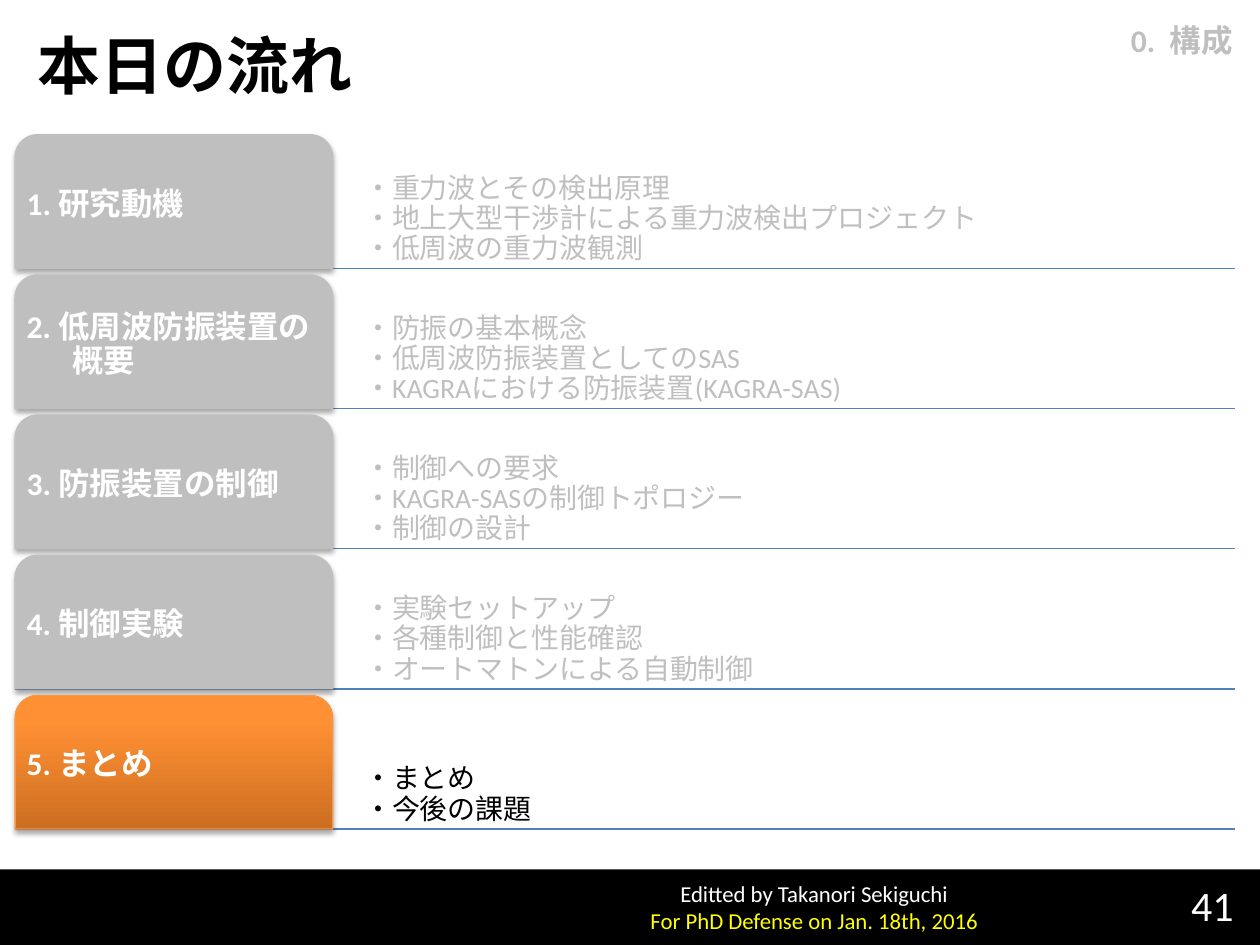
from lxml.etree import SubElement
from pptx import Presentation
from pptx.dml.color import RGBColor
from pptx.enum.shapes import MSO_CONNECTOR, MSO_SHAPE
from pptx.enum.text import MSO_ANCHOR, PP_ALIGN
from pptx.oxml import parse_xml
from pptx.oxml.ns import nsdecls, qn
from pptx.util import Inches, Pt

# Content
TITLE = "本日の流れ"
CORNER = "0.  構成"
PAGE_NUMBER = "41"
FOOTER = [("Editted by Takanori Sekiguchi", "white"),
          ("For PhD Defense on Jan. 18th, 2016", "yellow")]
SECTIONS = [
    (["1. 研究動機"],
     ["重力波とその検出原理", "地上大型干渉計による重力波検出プロジェクト", "低周波の重力波観測"]),
    (["2. 低周波防振装置の", "概要"],
     ["防振の基本概念", "低周波防振装置としてのSAS", "KAGRAにおける防振装置(KAGRA-SAS)"]),
    (["3. 防振装置の制御"],
     ["制御への要求", "KAGRA-SASの制御トポロジー", "制御の設計"]),
    (["4. 制御実験"],
     ["実験セットアップ", "各種制御と性能確認", "オートマトンによる自動制御"]),
    (["5. まとめ"],
     ["まとめ", "今後の課題"]),
]
CURRENT = 4

COLORS = {"black": "000000", "white": "FFFFFF", "yellow": "FFFF00",
          "gray": "BFBFBF", "blue": "4F81BD", "orange": "F79646"}
CURRENT_STOPS = [(0, "CC6E20"), (80, "FF9034"), (100, "FF9136")]
FONT = "Calibri"

# Layout in inches
LEFT, TOP, PITCH = 0.12, 1.07, 1.1125
TAB_WIDTH, ROW_HEIGHT, RIGHT = 2.52, 1.06, 9.8
TOPIC_INDENT, LABEL_INDENT = 0.22, 0.36


def color(name):
    return RGBColor.from_string(COLORS[name])


def set_frame(shape, anchor, inset=None, wrap=True):
    frame = shape.text_frame
    frame.word_wrap = wrap
    frame.vertical_anchor = anchor
    if inset is not None:
        frame.margin_left = frame.margin_right = Inches(inset)
        frame.margin_top = frame.margin_bottom = Inches(inset)
    return frame


def add_box(page, place, anchor=MSO_ANCHOR.TOP, inset=None, wrap=True):
    box = page.shapes.add_textbox(*map(Inches, place))
    return set_frame(box, anchor, inset, wrap)


def add_span(para, text, size, name, bold=False):
    span = para.add_run()
    span.text = text
    span.font.name = FONT
    span.font.size = Pt(size)
    span.font.bold = bold
    span.font.color.rgb = color(name)


def set_indent(para, left, first=0.0):
    properties = para._p.get_or_add_pPr()
    properties.set("marL", str(Inches(left)))
    properties.set("indent", str(Inches(first)))


def set_gradient(shape):
    stops = "".join(f'<a:gs pos="{pos * 1000}"><a:srgbClr val="{value}"/></a:gs>'
                    for pos, value in CURRENT_STOPS)
    gradient = parse_xml(f'<a:gradFill {nsdecls("a")} rotWithShape="1"><a:gsLst>{stops}'
                         '</a:gsLst><a:lin ang="16200000" scaled="0"/></a:gradFill>')
    solid = shape._element.spPr.find(qn("a:solidFill"))
    solid.getparent().replace(solid, gradient)


def set_shadow(shape):
    shape.shadow.inherit = False
    effects = shape._element.spPr.find(qn("a:effectLst"))
    effects.append(parse_xml(
        f'<a:outerShdw {nsdecls("a")} blurRad="{Pt(3.1)}" dist="{Pt(1.8)}" dir="5400000" '
        f'rotWithShape="0"><a:srgbClr val="{COLORS["black"]}"><a:alpha val="35000"/>'
        '</a:srgbClr></a:outerShdw>'))


def add_rule(page, y):
    rule = page.shapes.add_connector(MSO_CONNECTOR.STRAIGHT, Inches(LEFT), Inches(y),
                                     Inches(RIGHT), Inches(y))
    rule.line.color.rgb = color("blue")
    rule.line.width = Pt(0.75)
    SubElement(rule._element.spPr, qn("a:effectLst"))


def add_topics(page, top, topics, name):
    place = (LEFT + TAB_WIDTH, top, RIGHT - LEFT - TAB_WIDTH, ROW_HEIGHT)
    frame = add_box(page, place, MSO_ANCHOR.BOTTOM, 0.03)
    for index, topic in enumerate(topics):
        para = frame.add_paragraph() if index else frame.paragraphs[0]
        set_indent(para, TOPIC_INDENT)
        para.line_spacing = 0.9
        add_span(para, "・" + topic, 16, name)


def add_tab(page, top, label, active):
    tab = page.shapes.add_shape(MSO_SHAPE.ROUND_2_SAME_RECTANGLE, Inches(LEFT), Inches(top),
                                Inches(TAB_WIDTH), Inches(ROW_HEIGHT))
    tab.adjustments[0] = 0.167
    tab.adjustments[1] = 0
    tab.fill.solid()
    tab.fill.fore_color.rgb = color("gray")
    tab.line.color.rgb = color("orange" if active else "gray")
    tab.line.width = Pt(0.75)
    if active:
        set_gradient(tab)
    set_shadow(tab)
    para = set_frame(tab, MSO_ANCHOR.MIDDLE, 0.04).paragraphs[0]
    para.alignment = PP_ALIGN.LEFT
    para.line_spacing = 0.9
    set_indent(para, LABEL_INDENT, -LABEL_INDENT)
    for index, line in enumerate(label):
        if index:
            para.add_line_break()
        add_span(para, line, 18, "white", bold=True)


def main():
    deck = Presentation()
    deck.slide_width, deck.slide_height = Inches(10), Inches(7.5)
    page = deck.slides.add_slide(deck.slide_layouts[6])

    # Footer band
    band = page.shapes.add_shape(MSO_SHAPE.RECTANGLE, Inches(0), Inches(6.9),
                                 Inches(10), Inches(0.6))
    band.shadow.inherit = False
    band.fill.solid()
    band.fill.fore_color.rgb = color("black")
    band.line.fill.background()
    frame = add_box(page, (5.01, 6.93, 2.9, 0.54), wrap=False)
    for index, (text, name) in enumerate(FOOTER):
        para = frame.add_paragraph() if index else frame.paragraphs[0]
        para.alignment = PP_ALIGN.CENTER
        add_span(para, text, 13, name)

    # Title, page number and corner label
    for place, text, size, name, bold, align, anchor in [
        ((0.2, 0.13, 9.53, 0.76), TITLE, 36, "black", True, PP_ALIGN.LEFT, MSO_ANCHOR.MIDDLE),
        ((9.02, 6.98, 0.87, 0.4), PAGE_NUMBER, 24, "white", False, PP_ALIGN.RIGHT,
         MSO_ANCHOR.MIDDLE),
        ((6.03, 0.12, 3.85, 0.4), CORNER, 18, "gray", True, PP_ALIGN.RIGHT, MSO_ANCHOR.TOP),
    ]:
        para = add_box(page, place, anchor).paragraphs[0]
        para.alignment = align
        add_span(para, text, size, name, bold)

    # Section rows, rules behind the tabs
    tops = [TOP + PITCH * index for index in range(len(SECTIONS))]
    for top in tops:
        add_rule(page, top + ROW_HEIGHT)
    for index, (top, (label, topics)) in enumerate(zip(tops, SECTIONS)):
        active = index == CURRENT
        add_topics(page, top, topics, "black" if active else "gray")
        add_tab(page, top, label, active)

    deck.save("out.pptx")


if __name__ == "__main__":
    main()
